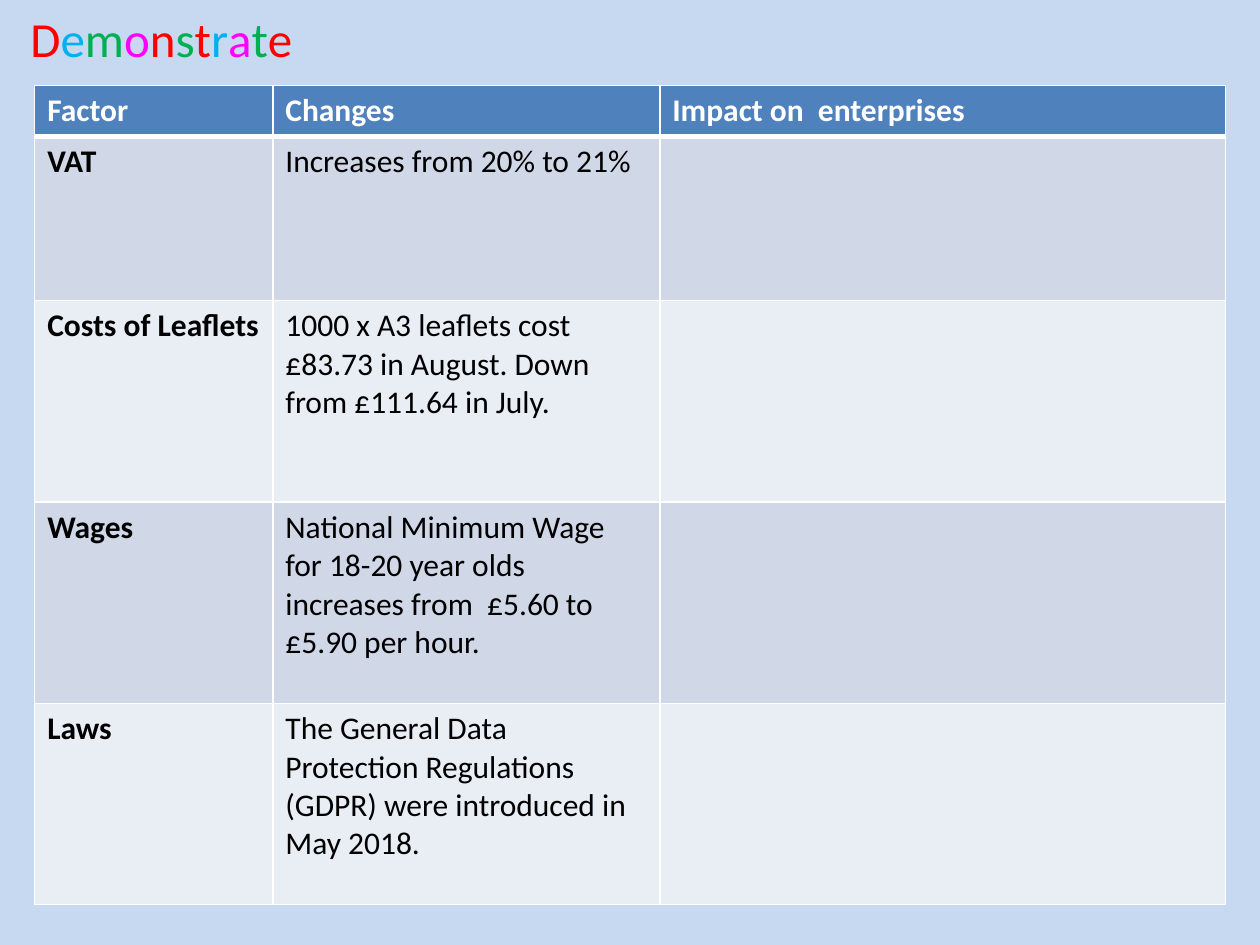
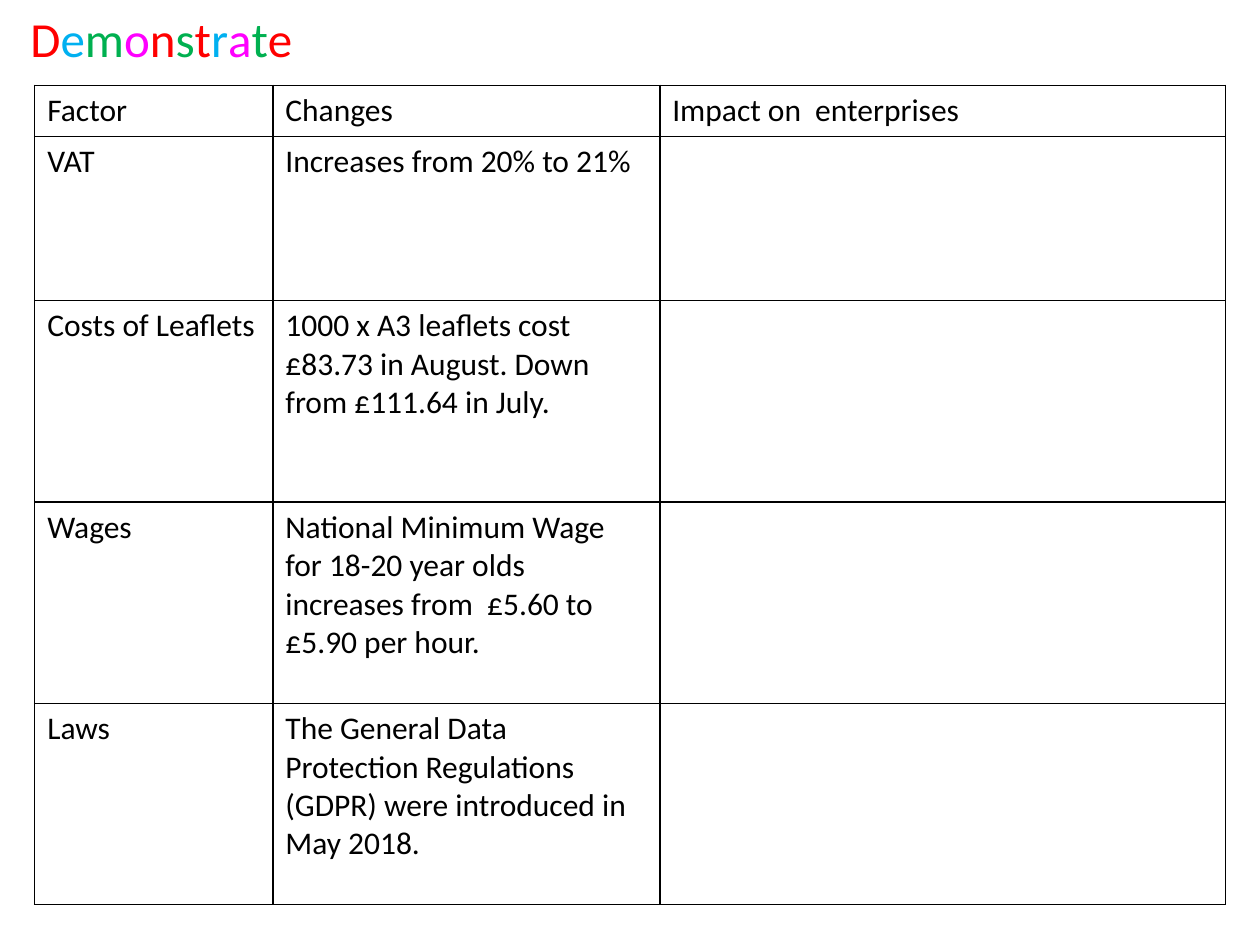
from lxml.etree import SubElement
from pptx import Presentation
from pptx.dml.color import RGBColor
from pptx.enum.text import MSO_ANCHOR, MSO_AUTO_SIZE, PP_ALIGN
from pptx.oxml.ns import qn
from pptx.util import Cm, Pt

# Shared look
FONT = "Calibri"
WHITE, BLACK = "FFFFFF", "000000"
HEADER_BLUE, BANDS = "4F81BD", ("D0D8E8", "E9EDF4")
LETTER_COLOURS = {"R": "FF0000", "B": "00B0F0", "G": "00B050", "P": "FF00FF"}
TITLE, TITLE_PATTERN = "Demonstrate", "RBGPRGRBPGR"

# Shared table content and grid, in cm
ROWS = [
    ("Factor", "Changes", "Impact on  enterprises"),
    ("VAT", "Increases from 20% to 21%", ""),
    ("Costs of Leaflets",
     "1000 x A3 leaflets cost £83.73 in August. Down from £111.64 in July.", ""),
    ("Wages",
     "National Minimum Wage for 18-20 year olds increases from  £5.60 to "
     "£5.90 per hour.", ""),
    ("Laws",
     "The General Data Protection Regulations (GDPR) were introduced in "
     "May 2018.", ""),
]
COL_WIDTHS = (4.8, 7.8, 11.4)
ROW_HEIGHTS = (1.03, 3.31, 4.06, 4.06, 4.06)


def rgb(colour):
    return RGBColor.from_string(colour)


def add_text(p, text, size=18, colour=BLACK, bold=False):
    r = p.add_run()
    r.text = text
    r.font.name = FONT
    r.font.size = Pt(size)
    r.font.bold = bold
    r.font.color.rgb = rgb(colour)


def set_fill(fill, colour):
    if colour:
        fill.solid()
        fill.fore_color.rgb = rgb(colour)
    else:
        fill.background()


def set_borders(cell, colour, top=1, bottom=1):
    """Draw all four edges; the lines must come before the fill in the XML."""
    tc_pr = cell._tc.get_or_add_tcPr()
    widths = {"a:lnL": 1, "a:lnR": 1, "a:lnT": top, "a:lnB": bottom}
    for i, (tag, width) in enumerate(widths.items()):
        ln = SubElement(tc_pr, qn(tag), w=str(Pt(width)))
        fill = SubElement(ln, qn("a:solidFill"))
        SubElement(fill, qn("a:srgbClr"), val=colour)
        tc_pr.insert(i, ln)


def add_slide(prs, background):
    s = prs.slides.add_slide(prs.slide_layouts[5])  # Title Only
    set_fill(s.background.fill, background)
    return s


def add_rainbow_title(s):
    sp = s.shapes.title
    sp.left, sp.top, sp.width, sp.height = Cm(0.36), Cm(0.05), Cm(13.6), Cm(1.45)
    tf = sp.text_frame
    tf.auto_size = MSO_AUTO_SIZE.NONE
    tf.vertical_anchor = MSO_ANCHOR.TOP
    p = tf.paragraphs[0]
    p.alignment = PP_ALIGN.LEFT
    for letter, key in zip(TITLE, TITLE_PATTERN):
        add_text(p, letter, size=28, colour=LETTER_COLOURS[key])


def add_factor_table(s, border, styled):
    """Styled: blue header, banded rows, bold first column. Else a plain grid."""
    table = s.shapes.add_table(
        len(ROWS), len(COL_WIDTHS), Cm(0.7), Cm(1.72),
        Cm(sum(COL_WIDTHS)), Cm(sum(ROW_HEIGHTS))).table
    table.first_row = table.horz_banding = False
    for column, width in zip(table.columns, COL_WIDTHS):
        column.width = Cm(width)
    for row, height in zip(table.rows, ROW_HEIGHTS):
        row.height = Cm(height)

    header_rule = 3 if styled else 1
    for i, texts in enumerate(ROWS):
        header = i == 0
        fill = HEADER_BLUE if header else BANDS[(i - 1) % 2]
        for j, text in enumerate(texts):
            cell = table.cell(i, j)
            set_fill(cell.fill, fill if styled else None)
            set_borders(cell, border,
                        top=header_rule if i == 1 else 1,
                        bottom=header_rule if header else 1)
            if text:
                add_text(cell.text_frame.paragraphs[0], text,
                         colour=WHITE if styled and header else BLACK,
                         bold=styled and (header or j == 0))


def main():
    prs = Presentation()
    prs.slide_width, prs.slide_height = Cm(25.4), Cm(19.05)

    # Coloured version, then the plain one for printing
    for background, border, styled in (("C6D9F1", WHITE, True),
                                       (WHITE, BLACK, False)):
        s = add_slide(prs, background)
        add_rainbow_title(s)
        add_factor_table(s, border, styled)

    prs.save("out.pptx")


if __name__ == "__main__":
    main()
